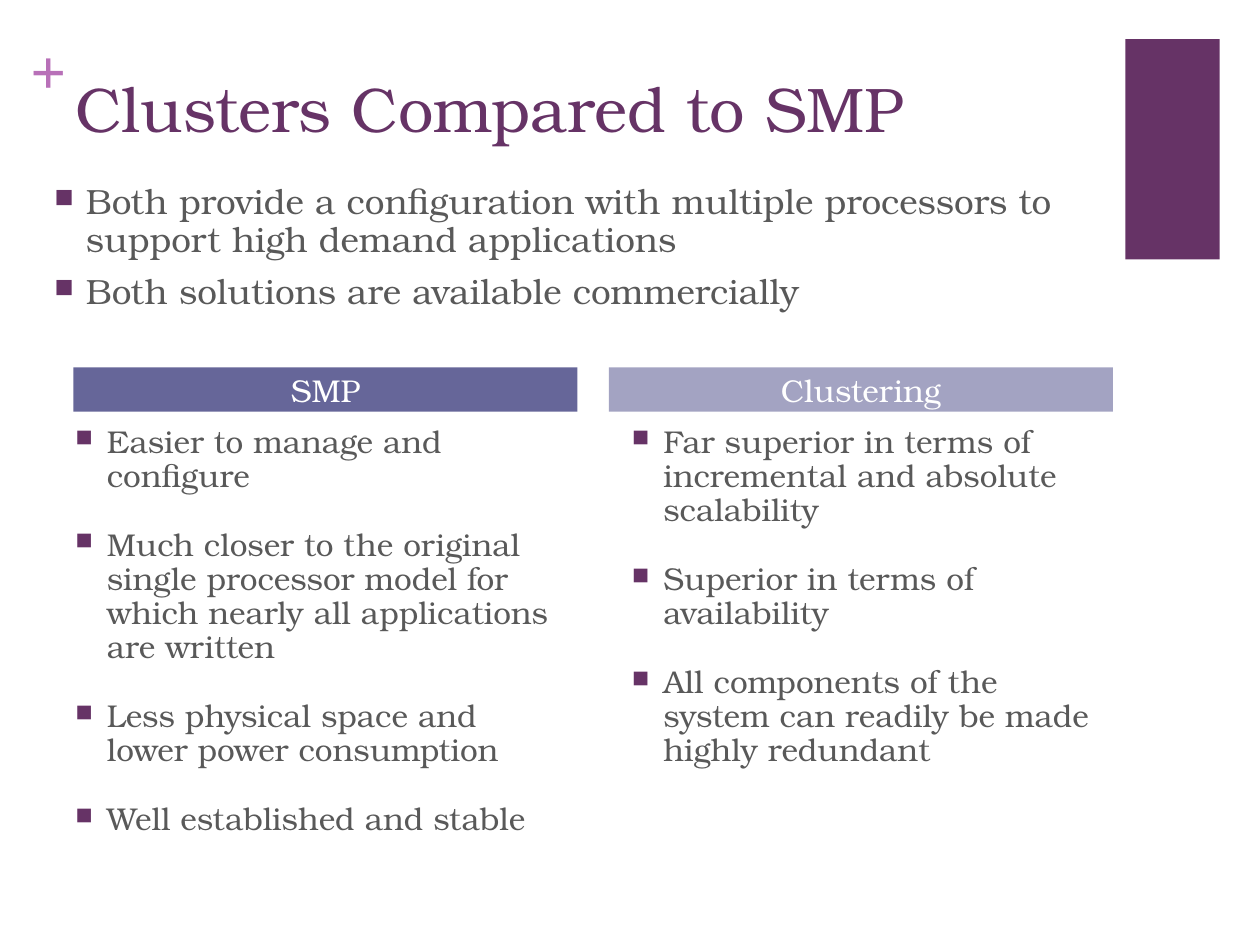
from dataclasses import dataclass

from lxml.etree import SubElement
from pptx import Presentation
from pptx.dml.color import RGBColor
from pptx.enum.shapes import MSO_SHAPE
from pptx.enum.text import MSO_ANCHOR, PP_ALIGN
from pptx.oxml.ns import qn
from pptx.slide import Slide
from pptx.text.text import TextFrame
from pptx.util import Pt


@dataclass(frozen=True)
class Theme:
    serif: str = "TeX Gyre Bonum"
    plus_font: str = "Times New Roman"
    plum: str = "663366"
    orchid: str = "B870B8"
    grey: str = "595959"
    white: str = "FFFFFF"
    slate: str = "666699"
    lavender: str = "A3A3C2"
    title_size: float = 36
    intro_size: float = 20
    body_size: float = 18


@dataclass(frozen=True)
class Box:
    left: float
    top: float
    width: float
    height: float

    def lengths(self) -> tuple[Pt, Pt, Pt, Pt]:
        return Pt(self.left), Pt(self.top), Pt(self.width), Pt(self.height)


@dataclass(frozen=True)
class Column:
    heading: str
    fill: str
    heading_left: float
    body_left: float
    points: tuple[str, ...]


THEME = Theme()
COLUMN_WIDTH = 288
HANGING = 18

INTRO = (
    "Both provide a configuration with multiple processors to support high demand applications",
    "Both solutions are available commercially",
)
COLUMNS = (
    Column("SMP", THEME.slate, 42, 36, (
        "Easier to manage and configure",
        "Much closer to the original single processor model for which nearly all applications are written",
        "Less physical space and lower power consumption",
        "Well established and stable",
    )),
    Column("Clustering", THEME.lavender, 348, 354, (
        "Far superior in terms of incremental and absolute scalability",
        "Superior in terms of availability",
        "All components of the system can readily be made highly redundant",
    )),
)


def add_bullet(paragraph) -> None:
    properties = paragraph._p.get_or_add_pPr()
    properties.set("marL", str(Pt(HANGING)))
    properties.set("indent", str(-Pt(HANGING)))
    colour = SubElement(properties, qn("a:buClr"))
    SubElement(colour, qn("a:srgbClr"), val=THEME.plum)
    SubElement(properties, qn("a:buSzPct"), val="75000")
    SubElement(properties, qn("a:buChar"), char="■")


def write(frame: TextFrame, *lines: str, size: float, colour: str,
          font: str = THEME.serif, bold: bool = False, bulleted: bool = False,
          gap: float = 0, align: PP_ALIGN = PP_ALIGN.LEFT,
          anchor: MSO_ANCHOR = MSO_ANCHOR.TOP,
          insets: tuple[float, float] = (7.2, 3.6)) -> None:
    frame.word_wrap = True
    frame.vertical_anchor = anchor
    frame.margin_left = frame.margin_right = Pt(insets[0])
    frame.margin_top = frame.margin_bottom = Pt(insets[1])
    for index, line in enumerate(lines):
        paragraph = frame.add_paragraph() if index else frame.paragraphs[0]
        paragraph.alignment = align
        if index:
            paragraph.space_before = Pt(gap)
        if bulleted:
            paragraph.line_spacing = 0.9
            add_bullet(paragraph)
        run = paragraph.add_run()
        run.text = line
        run.font.name = font
        run.font.size = Pt(size)
        run.font.bold = bold
        run.font.color.rgb = RGBColor.from_string(colour)


def add_text(slide: Slide, box: Box, *lines: str, **text_format) -> None:
    write(slide.shapes.add_textbox(*box.lengths()).text_frame, *lines, **text_format)


def add_block(slide: Slide, box: Box, fill: str) -> TextFrame:
    block = slide.shapes.add_shape(MSO_SHAPE.RECTANGLE, *box.lengths())
    block.shadow.inherit = False
    block.fill.solid()
    block.fill.fore_color.rgb = RGBColor.from_string(fill)
    block.line.fill.background()
    return block.text_frame


def add_column(slide: Slide, column: Column) -> None:
    add_text(slide, Box(column.body_left, 240, COLUMN_WIDTH, 289.5), *column.points,
             size=THEME.body_size, colour=THEME.grey, bulleted=True, gap=20)
    heading = add_block(slide, Box(column.heading_left, 210, COLUMN_WIDTH, 25.2), column.fill)
    write(heading, column.heading, size=THEME.body_size, colour=THEME.white,
          align=PP_ALIGN.CENTER, anchor=MSO_ANCHOR.MIDDLE, insets=(7.2, 0))


def main() -> None:
    presentation = Presentation()
    presentation.slide_width, presentation.slide_height = Pt(720), Pt(540)
    slide = presentation.slides.add_slide(presentation.slide_layouts[6])

    add_block(slide, Box(643, 22.3, 54, 126), THEME.plum)
    add_text(slide, Box(17.3, 18, 21, 44), "+", size=THEME.title_size, colour=THEME.orchid,
             font=THEME.plus_font, bold=True, insets=(0, 0))
    add_text(slide, Box(36, 36, 595, 57.6), "Clusters Compared to SMP",
             size=THEME.title_size, colour=THEME.plum)
    for column in COLUMNS:
        add_column(slide, column)
    add_text(slide, Box(24, 102, 596, 110), *INTRO, size=THEME.intro_size,
             colour=THEME.grey, bulleted=True, gap=8)

    presentation.save("out.pptx")


if __name__ == "__main__":
    main()
